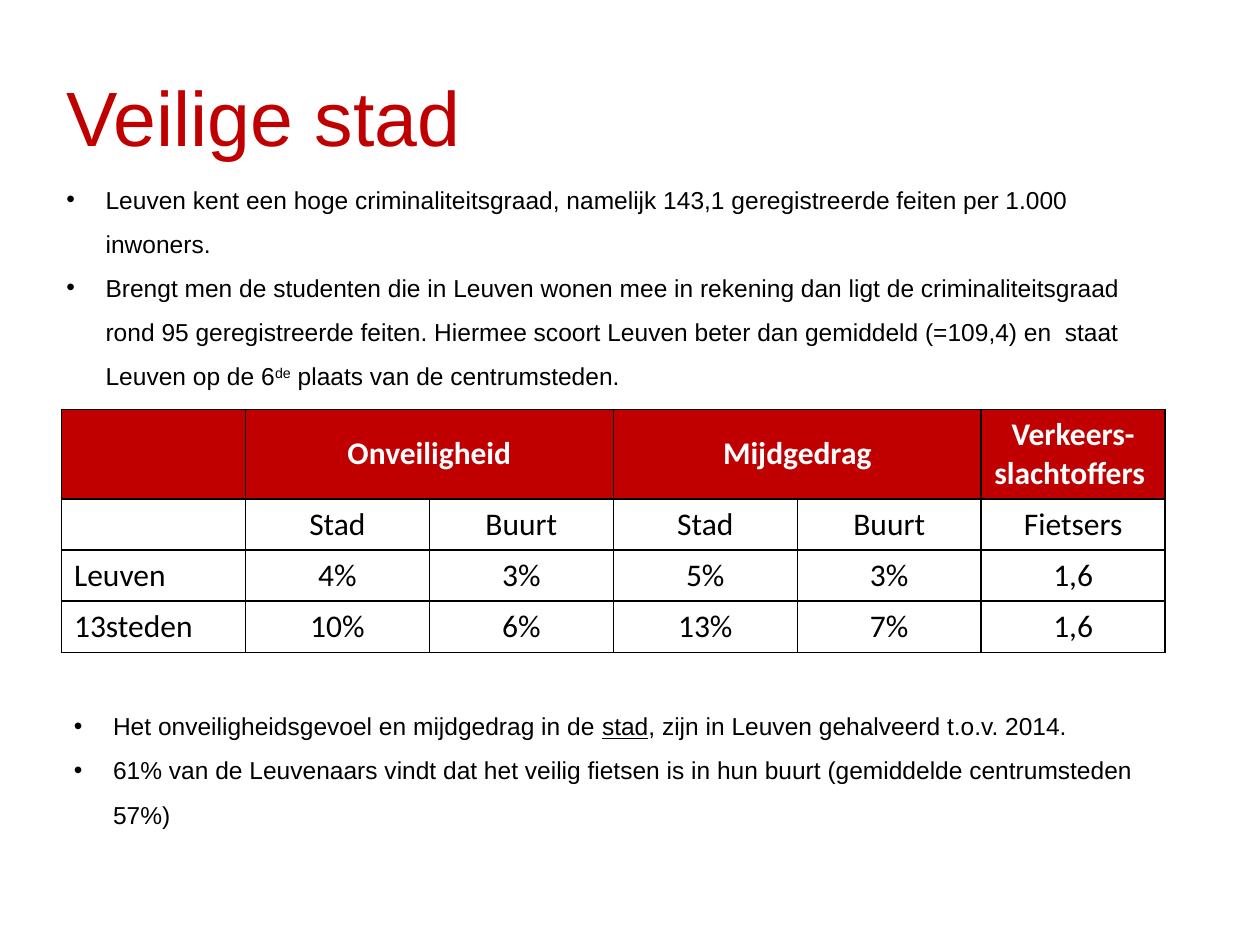
from lxml import etree
from pptx import Presentation
from pptx.dml.color import RGBColor
from pptx.enum.text import MSO_ANCHOR, PP_ALIGN
from pptx.oxml.ns import qn
from pptx.util import Cm, Pt

MIDDLE, TOP = MSO_ANCHOR.MIDDLE, MSO_ANCHOR.TOP
LEFT, CENTER = PP_ALIGN.LEFT, PP_ALIGN.CENTER
TITLE_ONLY = 5
COLORS = {"red": "C00000", "white": "FFFFFF", "black": "000000"}

CRIME_POINTS = [
    [("Leuven kent een hoge criminaliteitsgraad, namelijk 143,1 geregistreerde "
      "feiten per 1.000 inwoners.", "")],
    [("Brengt men de studenten die in Leuven wonen mee in rekening dan ligt de "
      "criminaliteitsgraad rond 95 geregistreerde feiten. Hiermee scoort Leuven "
      "beter dan gemiddeld (=109,4) en  staat Leuven op de 6", ""),
     ("de", "superscript"),
     (" plaats van de centrumsteden.", "")],
]
FEELING_POINTS = [
    [("Het onveiligheidsgevoel en mijdgedrag in de ", ""),
     ("stad", "underline"),
     (", zijn in Leuven gehalveerd t.o.v. 2014.", "")],
    [("61% van de Leuvenaars vindt dat het veilig fietsen is in hun buurt "
      "(gemiddelde centrumsteden 57%)", "")],
]
SAFETY_ROWS = [
    ["", "Onveiligheid", "", "Mijdgedrag", "", "Verkeers-slachtoffers "],
    ["", "Stad", "Buurt", "Stad", "Buurt", "Fietsers"],
    ["Leuven", "4%", "3%", "5%", "3%", "1,6"],
    ["13steden", "10%", "6%", "13%", "7%", "1,6"],
]


def add_span(para, text, font, size, color, bold=False):
    span = para.add_run()
    span.text = text
    span.font.name = font
    span.font.size = Pt(size)
    span.font.bold = bold
    span.font.color.rgb = RGBColor.from_string(COLORS[color])
    return span


def place_title(page, text, left, top, width, height):
    title = page.shapes.title
    title.left, title.top, title.width, title.height = left, top, width, height
    frame = title.text_frame
    frame.vertical_anchor = MIDDLE
    para = frame.paragraphs[0]
    para.alignment = LEFT
    add_span(para, text, "Arial", 44, "red")


def add_bullet(para, indent):
    properties = para._p.get_or_add_pPr()
    properties.set("marL", str(indent))
    properties.set("indent", str(-indent))
    etree.SubElement(properties, qn("a:buFont")).set("typeface", "Arial")
    etree.SubElement(properties, qn("a:buChar")).set("char", "•")


def add_bullet_list(page, points, left, top, width, height):
    frame = page.shapes.add_textbox(left, top, width, height).text_frame
    frame.word_wrap = True
    for index, point in enumerate(points):
        para = frame.add_paragraph() if index else frame.paragraphs[0]
        para.line_spacing = 1.5
        add_bullet(para, Cm(0.79))
        for text, style in point:
            span = add_span(para, text, "Arial", 14, "black")
            if style == "underline":
                span.font.underline = True
            elif style == "superscript":
                span._r.get_or_add_rPr().set("baseline", "30000")


def add_borders(cell):
    properties = cell._tc.get_or_add_tcPr()
    for side in ("lnL", "lnR", "lnT", "lnB"):
        line = etree.SubElement(properties, qn(f"a:{side}"), w=str(Pt(1)))
        fill = etree.SubElement(line, qn("a:solidFill"))
        etree.SubElement(fill, qn("a:srgbClr"), val=COLORS["black"])


def add_safety_table(page, rows, left, top, width):
    header_height, row_height = Cm(1.81), Cm(1.03)
    height = header_height + row_height * (len(rows) - 1)
    columns = len(rows[0])
    table = page.shapes.add_table(len(rows), columns, left, top, width, height).table
    for column in table.columns:
        column.width = width // columns
    for row_index, texts in enumerate(rows):
        header = row_index == 0
        table.rows[row_index].height = header_height if header else row_height
        for column_index, text in enumerate(texts):
            cell = table.cell(row_index, column_index)
            add_borders(cell)
            if header:
                cell.fill.solid()
                cell.fill.fore_color.rgb = RGBColor.from_string(COLORS["red"])
            else:
                cell.fill.background()
            cell.vertical_anchor = MIDDLE if header else TOP
            para = cell.text_frame.paragraphs[0]
            para.alignment = CENTER if column_index else LEFT
            if text:
                add_span(para, text, "Calibri", 18,
                         "white" if header else "black", bold=header)
    # Each survey topic spans its city and neighbourhood columns
    for first in (1, 3):
        table.cell(0, first).merge(table.cell(0, first + 1))


def main():
    deck = Presentation()
    deck.slide_width, deck.slide_height = Cm(25.4), Cm(19.05)
    page = deck.slides.add_slide(deck.slide_layouts[TITLE_ONLY])

    # Title
    place_title(page, "Veilige stad", Cm(1.09), Cm(0.74), Cm(22.86), Cm(3.18))
    # Crime figures
    add_bullet_list(page, CRIME_POINTS, Cm(1.09), Cm(3.3), Cm(22.4), Cm(4.75))
    # Survey table
    add_safety_table(page, SAFETY_ROWS, Cm(1.24), Cm(8.25), Cm(22.25))
    # Feeling of safety
    add_bullet_list(page, FEELING_POINTS, Cm(1.24), Cm(13.92), Cm(22.3), Cm(2.95))

    deck.save("out.pptx")


if __name__ == "__main__":
    main()
